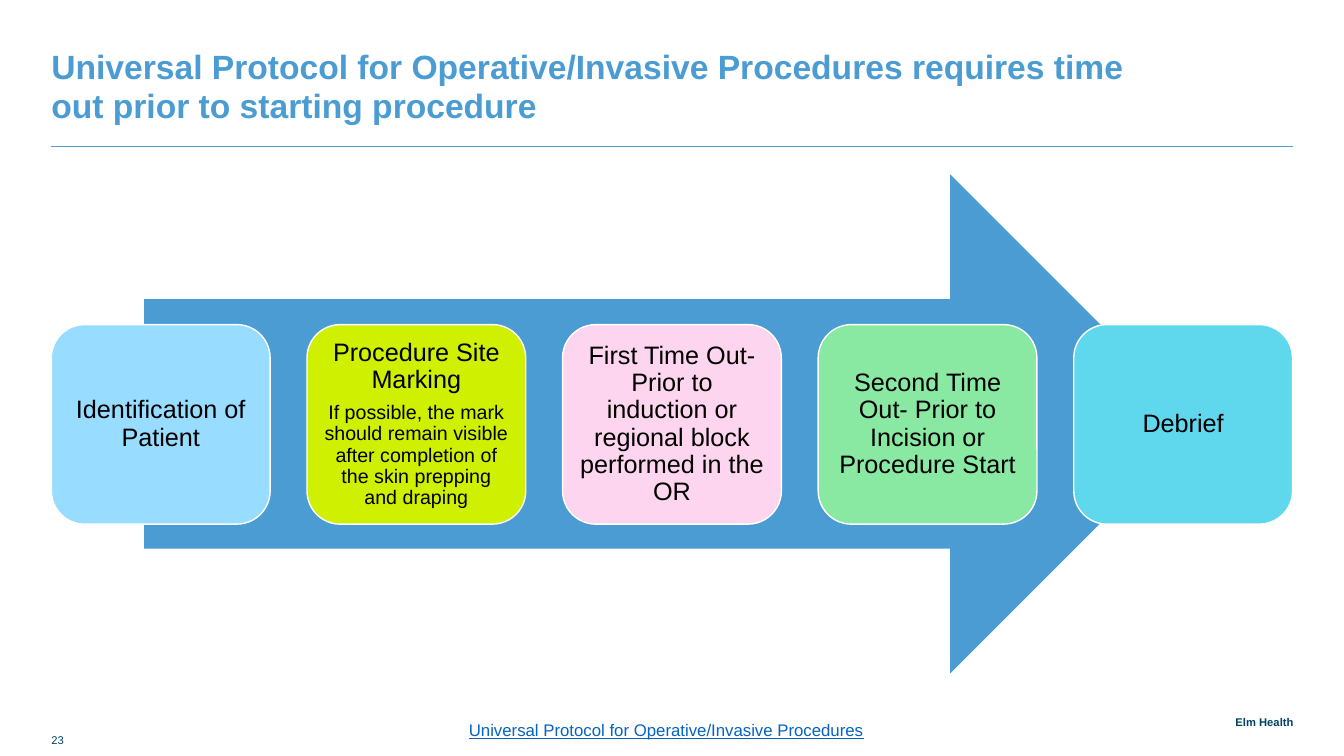
from pptx import Presentation
from pptx.dml.color import RGBColor
from pptx.enum.shapes import MSO_CONNECTOR as Conn, MSO_SHAPE as Kind
from pptx.enum.text import MSO_ANCHOR as Anchor, PP_ALIGN as Align
from pptx.oxml.ns import qn
from pptx.util import Inches, Pt
from lxml import etree

BLUE, NAVY = "4B9CD3", "004163"
LEFT, RIGHT = 0.51, 12.82
CARD_W, CARD_H, CARD_TOP = 2.17, 1.98, 3.22

# Each step: fill, then (text, size) paragraphs
STEPS = [
    ("98DCFF", [("Identification of Patient", 18)]),
    ("CFF000", [("Procedure Site Marking", 18),
                ("If possible, the mark should remain visible after "
                 "completion of the skin prepping and draping", 14)]),
    ("FDD5EE", [("First Time Out- Prior to induction or regional block "
                 "performed in the OR", 18)]),
    ("89E8A2", [("Second Time Out- Prior to Incision or Procedure Start", 18)]),
    ("5FD7ED", [("Debrief", 18)]),
]


def color(code):
    return RGBColor.from_string(code)


def write(para, text, size=18, ink="000000", bold=False, under=False,
          align=Align.LEFT, lead=None, after=0):
    run = para.add_run()
    run.text = text
    font = run.font
    font.name, font.size = "Arial", Pt(size)
    font.bold, font.underline = bold, under
    font.color.rgb = color(ink)
    para.alignment = align
    para.space_after = Pt(after)
    if lead:
        para.line_spacing = lead


def setup(frame, anchor, inset=0):
    frame.word_wrap = True
    frame.vertical_anchor = anchor
    frame.margin_left = frame.margin_right = Inches(inset)
    frame.margin_top = frame.margin_bottom = Inches(inset)


def label(slide, box, text, anchor=Anchor.BOTTOM, **style):
    frame = slide.shapes.add_textbox(*map(Inches, box)).text_frame
    setup(frame, anchor)
    write(frame.paragraphs[0], text, **style)


def block(slide, kind, box, fill, edge=None):
    shape = slide.shapes.add_shape(kind, *map(Inches, box))
    shape.shadow.inherit = False
    shape.fill.solid()
    shape.fill.fore_color.rgb = color(fill)
    if edge:
        shape.line.color.rgb = color(edge)
        shape.line.width = Pt(1)
    else:
        shape.line.fill.background()
    return shape


def card(slide, left, fill, paras):
    shape = block(slide, Kind.ROUNDED_RECTANGLE,
                  (left, CARD_TOP, CARD_W, CARD_H), fill, "FFFFFF")
    frame = shape.text_frame
    setup(frame, Anchor.MIDDLE, 0.07)
    for i, (text, size) in enumerate(paras):
        para = frame.add_paragraph() if i else frame.paragraphs[0]
        last = i == len(paras) - 1
        write(para, text, size=size, align=Align.CENTER, lead=0.9,
              after=0 if last else 6)


def rule(slide, top):
    line = slide.shapes.add_connector(
        Conn.STRAIGHT, *map(Inches, (LEFT, top, RIGHT, top)))
    line.line.color.rgb = color(BLUE)
    line.line.width = Pt(0.5)
    etree.SubElement(line._element.spPr, qn("a:effectLst"))


def main():
    deck = Presentation()
    deck.slide_width, deck.slide_height = Inches(13.33), Inches(7.5)
    slide = deck.slides.add_slide(deck.slide_layouts[6])

    # Heading
    label(slide, (LEFT, 0.38, 11.24, 0.86),
          "Universal Protocol for Operative/Invasive Procedures requires "
          "time out prior to starting procedure",
          size=24, ink=BLUE, bold=True, lead=Pt(28))
    rule(slide, 1.45)

    # Arrow with evenly spaced steps
    block(slide, Kind.RIGHT_ARROW, (1.43, 1.73, 10.47, 4.95), BLUE)
    pitch = (RIGHT - LEFT - CARD_W) / (len(STEPS) - 1)
    for i, (fill, paras) in enumerate(STEPS):
        card(slide, LEFT + i * pitch, fill, paras)

    # Footer
    label(slide, (LEFT, 7.18, 0.46, 0.23), "23", size=8, ink=NAVY)
    label(slide, (4.65, 7.14, 3.98, 0.3),
          "Universal Protocol for Operative/Invasive Procedures",
          anchor=Anchor.TOP, size=12, ink="0563C1", under=True)
    label(slide, (11.19, 7, 1.64, 0.23), "Elm Health",
          size=8, ink=NAVY, bold=True, align=Align.RIGHT)

    deck.save("out.pptx")


if __name__ == "__main__":
    main()
